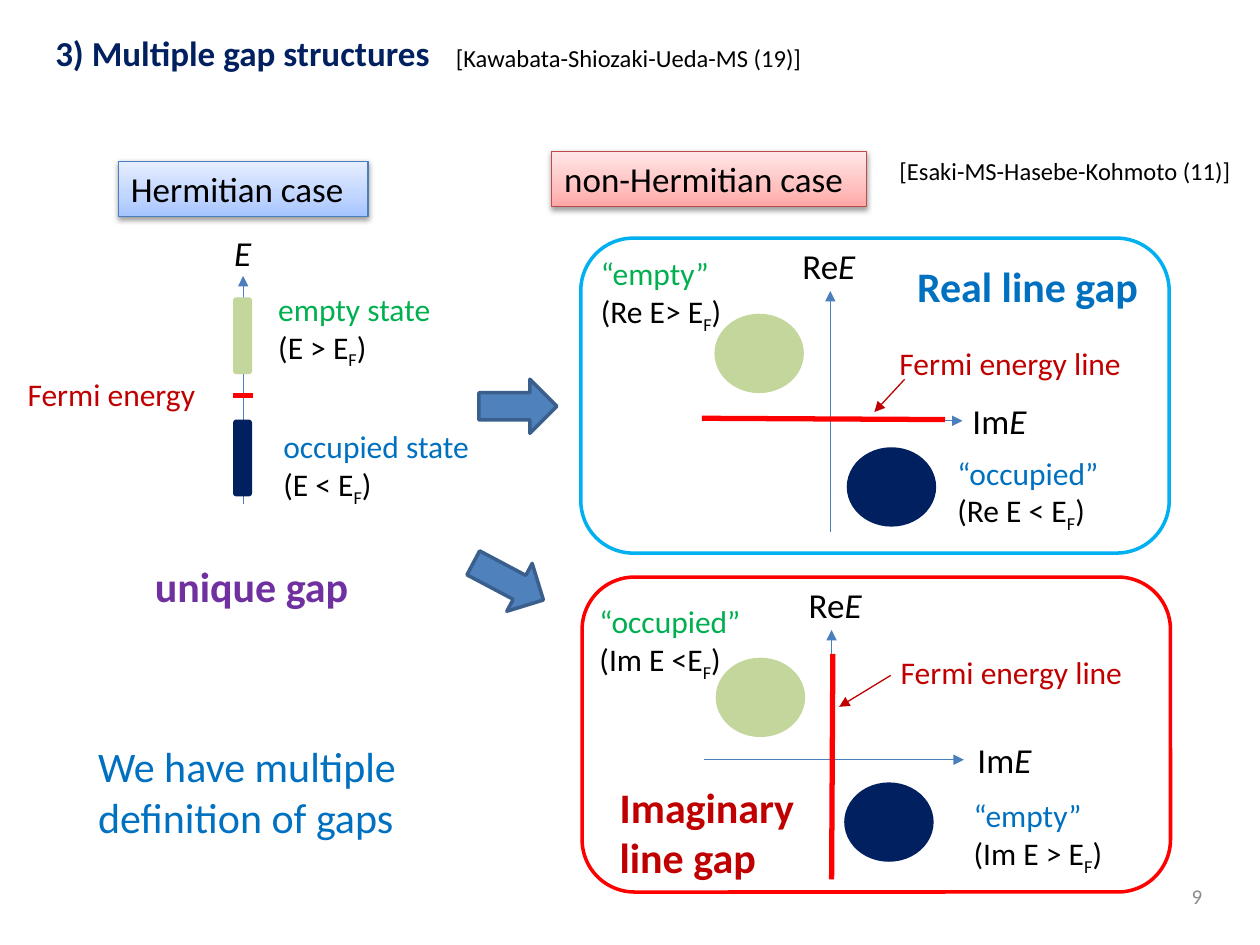
import copy
import pptx
import pptx.util
import pptx.dml.color
import pptx.enum.shapes
import pptx.enum.text
import pptx.oxml
import pptx.oxml.ns

Inches, Pt = pptx.util.Inches, pptx.util.Pt
RGBColor = pptx.dml.color.RGBColor
SHAPE = pptx.enum.shapes.MSO_SHAPE
ALIGN = pptx.enum.text.PP_ALIGN
ANCHOR = pptx.enum.text.MSO_ANCHOR
NS = pptx.oxml.ns.nsdecls("a")

BLACK = RGBColor(0x00, 0x00, 0x00)
GRAY = RGBColor(0x8C, 0x8C, 0x8C)
NAVY = RGBColor(0x00, 0x20, 0x60)
BLUE = RGBColor(0x00, 0x70, 0xC0)
SKY = RGBColor(0x00, 0xB0, 0xF0)
AXIS = RGBColor(0x4B, 0x7E, 0xBC)
ARROW = RGBColor(0x4F, 0x81, 0xBD)
ARROW_EDGE = RGBColor(0x3A, 0x5F, 0x8C)
GREEN = RGBColor(0x00, 0xB0, 0x50)
LIME = RGBColor(0xC3, 0xD6, 0x9B)
PURPLE = RGBColor(0x70, 0x30, 0xA0)
RED = RGBColor(0xFF, 0x00, 0x00)
DARK_RED = RGBColor(0xC0, 0x00, 0x00)
ROSE = RGBColor(0xBF, 0x4C, 0x48)
BLUE_FADE = [RGBColor(0xA4, 0xC4, 0xFF), RGBColor(0xBF, 0xD4, 0xFF), RGBColor(0xE6, 0xEE, 0xFF)]
RED_FADE = [RGBColor(0xFF, 0xA6, 0xA5), RGBColor(0xFF, 0xC0, 0xBF), RGBColor(0xFF, 0xE7, 0xE7)]


class Slide:
    font = "Calibri"

    def __init__(self, s):
        self.s = s

    def set_text(self, tf, paragraphs, size, bold=False):
        """Each paragraph is (colour, runs); a run is (text, style)."""
        for i, (color, runs) in enumerate(paragraphs):
            p = tf.paragraphs[0] if i == 0 else tf.add_paragraph()
            p.font.name, p.font.size, p.font.bold = self.font, Pt(size), bold
            p.font.color.rgb = color
            for text, style in runs:
                r = p.add_run()
                r.text = text
                if style == "italic":
                    r.font.italic = True
                elif style == "sub":
                    r.font._element.set("baseline", "-25000")

    def text(self, box, paragraphs, size=18, bold=False, wrap=False):
        sp = self.s.shapes.add_textbox(*map(Inches, box))
        tf = sp.text_frame
        tf.word_wrap = wrap
        self.set_text(tf, paragraphs, size, bold)
        return tf

    def label(self, box, text, color, size=18, bold=False, wrap=False):
        return self.text(box, [(color, [(text, None)])], size, bold, wrap)

    def energy(self, box, prefix=None):
        runs = [(prefix, None)] if prefix else []
        self.text(box, [(BLACK, runs + [("E", "italic")])], 20)

    def state(self, box, name, color, condition):
        self.text(box, [(color, [(name, None)]),
                        (BLACK, [(condition, None), ("F", "sub"), (")", None)])])

    def shape(self, kind, box, fill=None, line=None, width=2, rotation=0):
        sp = self.s.shapes.add_shape(kind, *map(Inches, box))
        sp.shadow.inherit = False
        sp.rotation = rotation
        if fill is None:
            sp.fill.background()
        else:
            sp.fill.solid()
            sp.fill.fore_color.rgb = fill
        if line is None:
            sp.line.fill.background()
        else:
            sp.line.color.rgb, sp.line.width = line, Pt(width)
        return sp

    def heading(self, box, text, fade, edge):
        sp = self.shape(SHAPE.RECTANGLE, box, line=edge, width=0.75)
        sp.fill.gradient()
        sp.fill.gradient_angle = 90
        stops = sp._element.spPr.find(".//" + pptx.oxml.ns.qn("a:gsLst"))
        stops.append(copy.deepcopy(stops[0]))
        for stop, position, color in zip(sp.fill.gradient_stops, (0, 0.35, 1), fade):
            stop.position, stop.color.rgb = position, color
        effects = sp._element.spPr.find(pptx.oxml.ns.qn("a:effectLst"))
        effects.append(pptx.oxml.parse_xml(
            f'<a:outerShdw {NS} blurRad="40000" dist="20000" dir="5400000" rotWithShape="0">'
            '<a:srgbClr val="000000"><a:alpha val="38000"/></a:srgbClr></a:outerShdw>'))
        tf = sp.text_frame
        tf.word_wrap = False
        tf.vertical_anchor = ANCHOR.TOP
        self.set_text(tf, [(BLACK, [(text, None)])], 20)
        tf.paragraphs[0].alignment = ALIGN.LEFT

    def line(self, start, end, color, width=0.75, arrow=False):
        ends = map(Inches, (*start, *end))
        sp = self.s.shapes.add_connector(pptx.enum.shapes.MSO_CONNECTOR.STRAIGHT, *ends)
        sp.line.color.rgb, sp.line.width = color, Pt(width)
        if arrow:
            sp.line._get_or_add_ln().append(
                pptx.oxml.parse_xml(f'<a:tailEnd {NS} type="triangle"/>'))
        sp._element.spPr.append(pptx.oxml.parse_xml(f"<a:effectLst {NS}/>"))

    def panel(self, x, y, edge, re_x, im_x, upper, lower):
        """Framed complex-energy plane with one disc above and one below."""
        self.shape(SHAPE.ROUNDED_RECTANGLE, (x, y, 4.67, 2.5), line=edge)
        self.line((x + 1.98, y + 2.33), (x + 1.98, y + 0.42), AXIS, arrow=True)
        self.line((x + 0.97, y + 1.45), (x + 3.03, y + 1.45), AXIS, arrow=True)
        self.energy((re_x, y, 0.63, 0.44), "Re")
        self.energy((im_x, y + 1.23, 0.63, 0.44), "Im")
        for place, color in ((upper, LIME), (lower, NAVY)):
            self.shape(SHAPE.OVAL, (*place, 0.71, 0.63), color)


def main():
    prs = pptx.Presentation()
    prs.slide_width, prs.slide_height = Inches(10), Inches(7.5)
    s = Slide(prs.slides.add_slide(prs.slide_layouts[6]))

    # Title, references and page number
    tf = s.label((0.34, 0.2, 3.92, 0.44), "3) Multiple gap structures", NAVY, 20, True, True)
    tf.paragraphs[0].space_before = Pt(6)
    s.label((3.52, 0.29, 2.96, 0.34), "[Kawabata-Shiozaki-Ueda-MS (19)]", BLACK, 14, wrap=True)
    s.label((7.04, 1.19, 2.96, 0.34), "[Esaki-MS-Hasebe-Kohmoto (11)]", BLACK, 14, wrap=True)
    tf = s.label((7.31, 6.91, 2.33, 0.4), "9", GRAY, 12, wrap=True)
    tf.vertical_anchor = ANCHOR.MIDDLE
    tf.paragraphs[0].alignment = ALIGN.RIGHT

    # Hermitian case: a single energy axis
    s.heading((0.94, 1.28, 1.98, 0.44), "Hermitian case", BLUE_FADE, AXIS)
    s.line((1.93, 4), (1.93, 2.19), AXIS, arrow=True)
    s.energy((1.76, 1.79, 0.34, 0.44))
    s.line((1.85, 3.14), (2.01, 3.14), RED, 3)
    for top, color in ((2.36, LIME), (3.33, NAVY)):
        s.shape(SHAPE.ROUNDED_RECTANGLE, (1.85, top, 0.15, 0.61), color)
    s.label((0.12, 2.93, 1.55, 0.4), "Fermi energy", DARK_RED)
    s.state((2.11, 2.25, 1.42, 0.71), "empty state", GREEN, "(E > E")
    s.state((2.15, 3.34, 1.69, 0.71), "occupied state", BLUE, "(E < E")
    s.label((1.13, 4.4, 1.88, 0.5), "unique gap", PURPLE, 24, True, True)
    s.label((0.68, 5.83, 3.36, 0.91), "We have multiple definition of gaps", BLUE, 24, wrap=True)

    # Arrows to the two kinds of gap
    s.shape(SHAPE.RIGHT_ARROW, (3.8, 3.01, 0.62, 0.43), ARROW, ARROW_EDGE)
    s.shape(SHAPE.RIGHT_ARROW, (3.72, 4.4, 0.63, 0.43), ARROW, ARROW_EDGE, rotation=27.9)

    # Non-Hermitian case: real line gap
    s.heading((4.38, 1.2, 2.5, 0.44), "non-Hermitian case", RED_FADE, ROSE)
    s.panel(4.61, 1.89, SKY, 6.27, 7.62, (5.67, 2.49), (6.72, 3.55))
    s.line((5.57, 3.32), (7.5, 3.33), RED, 3)
    s.label((7.18, 2.02, 2.12, 0.5), "Real line gap", BLUE, 24, True)
    s.state((4.67, 1.97, 1.22, 0.71), "“empty”", GREEN, "(Re E> E")
    s.state((7.5, 3.55, 1.33, 0.71), "“occupied”", BLUE, "(Re E < E")
    s.label((7.04, 2.68, 1.98, 0.4), "Fermi energy line", DARK_RED)
    s.line((7.18, 3.01), (6.94, 3.27), DARK_RED, arrow=True)

    # Non-Hermitian case: imaginary line gap
    s.panel(4.62, 4.58, RED, 6.32, 7.66, (5.68, 5.22), (6.7, 6.21))
    s.line((6.61, 5.19), (6.6, 6.98), RED, 3)
    s.label((4.82, 6.15, 1.67, 0.91), "Imaginary line gap", DARK_RED, 24, True, True)
    s.state((4.66, 4.73, 1.33, 0.71), "“occupied”", GREEN, "(Im E <E")
    s.state((7.63, 6.27, 1.24, 0.71), "“empty”", BLUE, "(Im E > E")
    s.label((7.05, 5.13, 1.98, 0.4), "Fermi energy line", DARK_RED)
    s.line((7.07, 5.36), (6.66, 5.61), DARK_RED, arrow=True)

    prs.save("out.pptx")


if __name__ == "__main__":
    main()
